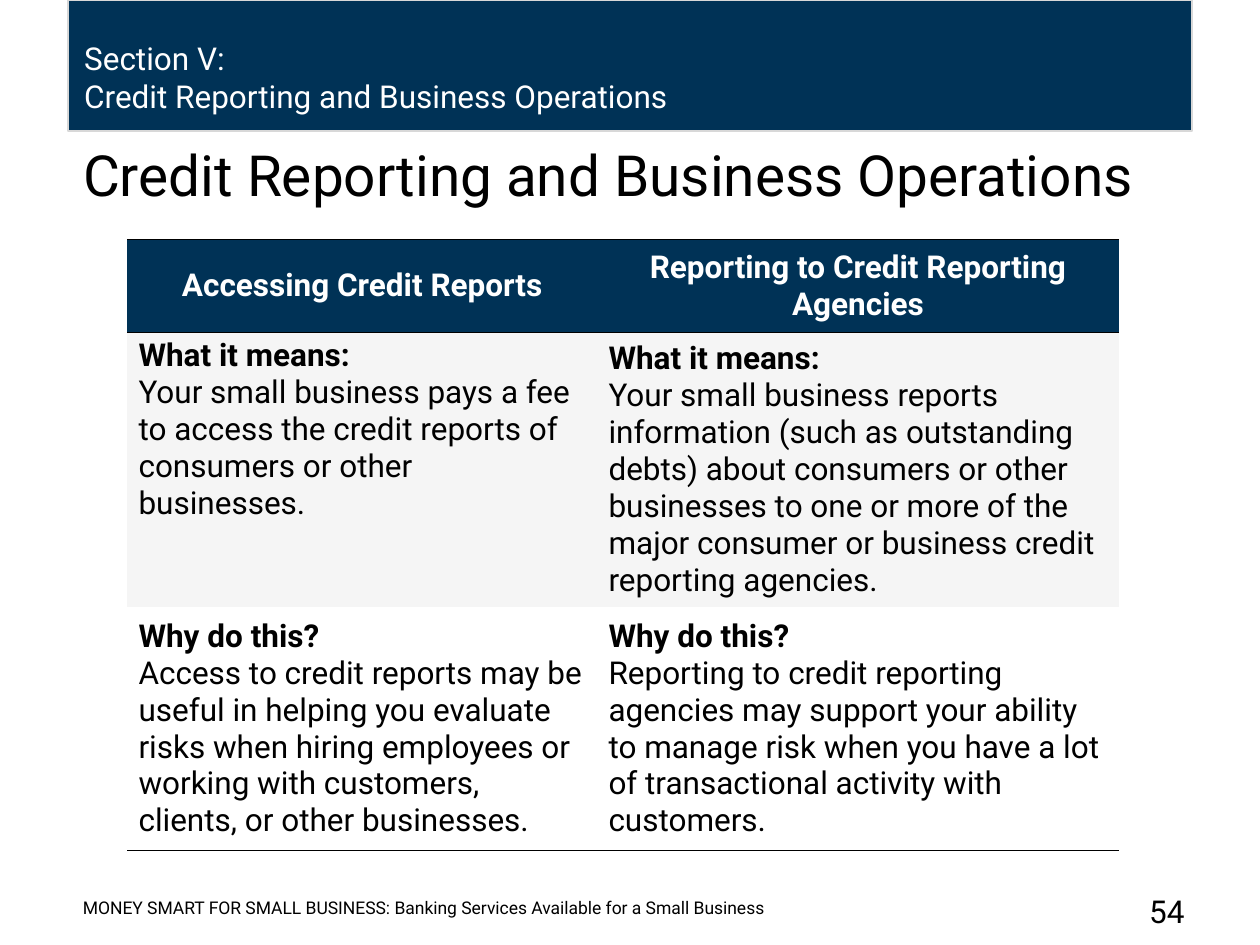
from lxml import etree
from pptx import Presentation
from pptx import util as u
from pptx.dml.color import RGBColor
from pptx.enum import shapes, text
from pptx.oxml import ns

COLORS = {"navy": "003256", "white": "FFFFFF", "black": "000000",
          "band": "F5F5F5", "edge": "D8D8D8"}
FONT = "Roboto"
NO_STYLE = "{2D5ABB26-0587-4C30-8999-92F81FD0307C}"
TOPIC = "Credit Reporting and Business Operations"
HEADERS = ["Accessing Credit Reports", "Reporting to Credit Reporting Agencies"]
ROWS = [
    ("What it means:", [
        "Your small business pays a fee to access the credit reports of "
        "consumers or other businesses.",
        "Your small business reports information (such as outstanding debts) "
        "about consumers or other businesses to one or more of the major "
        "consumer or business credit reporting agencies."]),
    ("Why do this?", [
        "Access to credit reports may be useful in helping you evaluate risks "
        "when hiring employees or working with customers, clients, or other "
        "businesses.",
        "Reporting to credit reporting agencies may support your ability to "
        "manage risk when you have a lot of transactional activity with "
        "customers."]),
]


def rgb(name):
    """Return a named colour."""
    return RGBColor.from_string(COLORS[name])


def write(tf, lines, size=18, color="black", align=text.PP_ALIGN.LEFT):
    """Fill a text frame with one paragraph per (wording, bold) pair."""
    for i, (wording, bold) in enumerate(lines):
        p = tf.add_paragraph() if i else tf.paragraphs[0]
        p.alignment = align
        r = p.add_run()
        r.text = wording
        r.font.name = FONT
        r.font.size = u.Pt(size)
        r.font.bold = bold
        r.font.color.rgb = rgb(color)


def add_label(s, box, lines, anchor=text.MSO_ANCHOR.TOP, **style):
    """Add a wrapping text box."""
    tf = s.shapes.add_textbox(*map(u.Inches, box)).text_frame
    tf.word_wrap = True
    tf.vertical_anchor = anchor
    write(tf, lines, **style)


def add_banner(s):
    """Add the section band and its heading."""
    sp = s.shapes.add_shape(shapes.MSO_SHAPE.RECTANGLE, u.Inches(0.54), 0,
                            u.Inches(8.92), u.Inches(1.04))
    sp.shadow.inherit = False
    sp.fill.solid()
    sp.fill.fore_color.rgb = rgb("navy")
    sp.line.color.rgb = rgb("edge")
    sp.line.width = u.Pt(0.75)
    add_label(s, (0.57, 0.26, 6.96, 0.71),
              [("Section V:", False), (TOPIC, False)], color="white")


def set_title(s):
    """Place and format the title placeholder."""
    sp = s.shapes.title
    sp.left, sp.top, sp.width, sp.height = map(u.Inches, (0.56, 1.01, 8.92, 0.69))
    tf = sp.text_frame
    tf.auto_size = text.MSO_AUTO_SIZE.NONE
    tf.vertical_anchor = text.MSO_ANCHOR.BOTTOM
    write(tf, [(TOPIC, False)], size=32.4)


def add_border(cell, side):
    """Draw a thin black rule on one side of a cell."""
    ln = etree.Element(ns.qn(f"a:{side}"), w=str(u.Pt(1)))
    fill = etree.SubElement(ln, ns.qn("a:solidFill"))
    etree.SubElement(fill, ns.qn("a:srgbClr"), val=COLORS["black"])
    cell._tc.get_or_add_tcPr().insert(0, ln)


def set_cell(cell, lines, fill=None, anchor=text.MSO_ANCHOR.MIDDLE, **style):
    """Format one table cell and write its text."""
    cell.margin_left = cell.margin_right = u.Inches(0.09)
    cell.margin_top = cell.margin_bottom = u.Inches(0.04)
    cell.vertical_anchor = anchor
    if fill:
        cell.fill.solid()
        cell.fill.fore_color.rgb = rgb(fill)
    else:
        cell.fill.background()
    write(cell.text_frame, lines, **style)


def add_comparison(s):
    """Add the table comparing access with reporting."""
    table = s.shapes.add_table(3, 2, *map(u.Inches, (1.01, 1.9, 7.87, 4.75))).table
    table._tbl.tblPr.find(ns.qn("a:tableStyleId")).text = NO_STYLE
    table.first_row = table.horz_banding = False
    for col, width in zip(table.columns, (3.73, 4.14)):
        col.width = u.Inches(width)
    for row, height in zip(table.rows, (0.74, 2.08, 1.93)):
        row.height = u.Inches(height)
    for c, header in enumerate(HEADERS):
        set_cell(table.cell(0, c), [(header, True)], "navy", color="white",
                 align=text.PP_ALIGN.CENTER)
        for r, (question, answers) in enumerate(ROWS, 1):
            set_cell(table.cell(r, c), [(question, True), (answers[c], False)],
                     "band" if r == 1 else None)
        table.cell(1, 0).vertical_anchor = text.MSO_ANCHOR.TOP
        for r, side in ((0, "lnB"), (0, "lnT"), (2, "lnB")):
            add_border(table.cell(r, c), side)


def main():
    """Build and save the slide."""
    prs = Presentation()
    prs.slide_width, prs.slide_height = u.Inches(10), u.Inches(7.5)
    s = prs.slides.add_slide(prs.slide_layouts[5])
    add_banner(s)
    set_title(s)
    add_comparison(s)
    add_label(s, (0.56, 7.04, 8.44, 0.32),
              [("MONEY SMART FOR SMALL BUSINESS: Banking Services Available "
                "for a Small Business", False)],
              anchor=text.MSO_ANCHOR.MIDDLE, size=10)
    add_label(s, (8.54, 7.03, 0.96, 0.32), [("54", False)],
              align=text.PP_ALIGN.RIGHT)
    prs.save("out.pptx")


if __name__ == "__main__":
    main()
